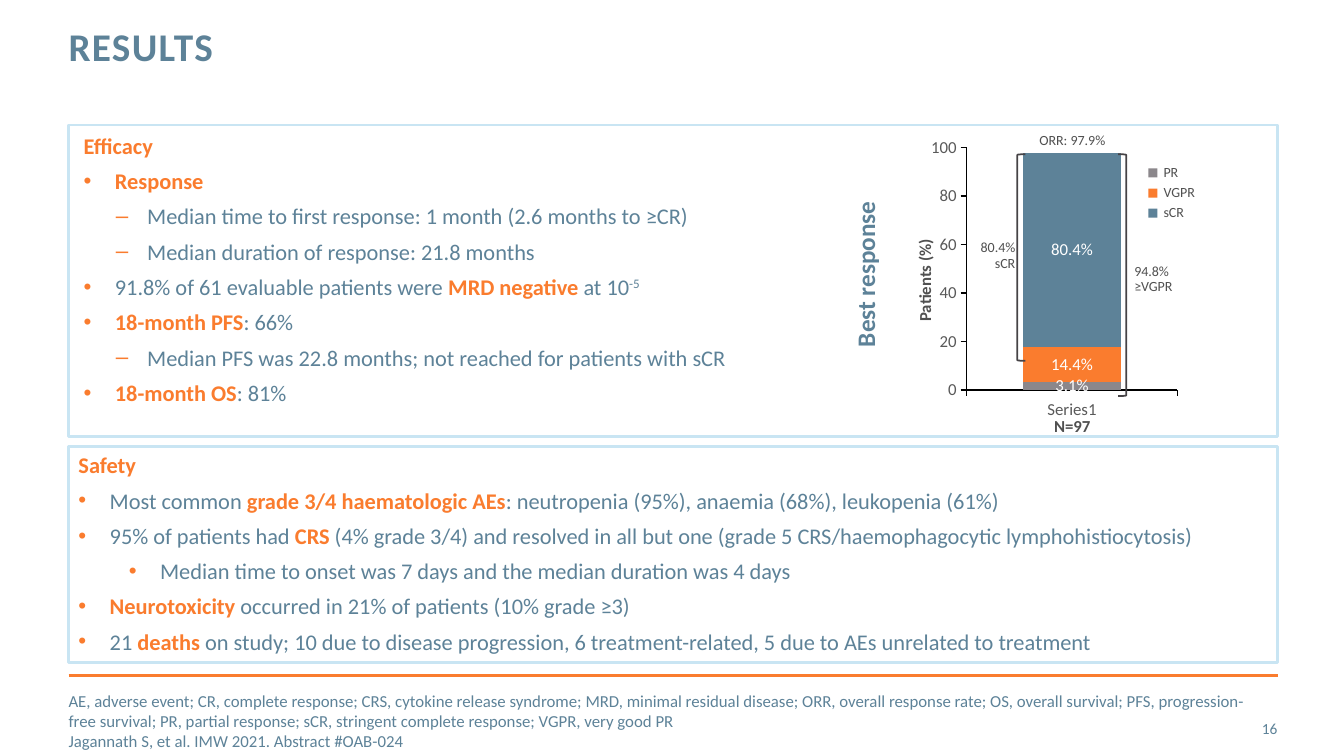
from lxml import etree
from pptx import Presentation
from pptx import util as u
from pptx.chart import data as cd
from pptx.dml.color import RGBColor
from pptx.enum import chart as ec, shapes, text
from pptx.oxml import parse_xml
from pptx.oxml.ns import nsdecls, qn

HUES = {"blue": "5D8298", "orange": "FA7C2E", "gray": "8B878B", "pale": "C9E5F3",
        "ink": "505050", "dark": "464346", "axis": "595959", "black": "000000",
        "white": "FFFFFF"}
ALIGN = {"l": text.PP_ALIGN.LEFT, "c": text.PP_ALIGN.CENTER, "r": text.PP_ALIGN.RIGHT}
MID = text.MSO_ANCHOR.MIDDLE
TOP = text.MSO_ANCHOR.TOP


def hue(name):
    return RGBColor.from_string(HUES[name])


def style(font, size, color, bold=False):
    font.name, font.size, font.bold = "Calibri", u.Pt(size), bold
    font.color.rgb = hue(color)


def write(par, words, size=16, color="blue", bold=False, align="l", line=None,
          before=0, mark=None, indent=0, track=0):
    props = par._p.get_or_add_pPr()
    if mark:
        props.set("marL", str(u.Inches(indent)))
        props.set("indent", str(-u.Inches(0.31)))
        tint = etree.SubElement(props, qn("a:buClr"))
        etree.SubElement(tint, qn("a:srgbClr"), val=HUES["orange"])
        etree.SubElement(props, qn("a:buFont"), typeface="Arial")
        etree.SubElement(props, qn("a:buChar"), char=mark)
    par.alignment = ALIGN[align]
    par.space_before = u.Pt(before)
    if line:
        par.line_spacing = line
    for i, part in enumerate(words.split("*")):
        for j, bit in enumerate(part.split("^")):
            if not bit:
                continue
            run = par.add_run()
            run.text = bit
            strong = i % 2 == 1
            style(run.font, size, "orange" if strong else color, bold or strong)
            if j:
                run._r.get_or_add_rPr().set("baseline", "30000")
            if track:
                run._r.get_or_add_rPr().set("spc", str(track))


class Deck:
    cols, rows = 133.3, 75

    def __init__(self):
        self.file = Presentation()
        self.file.slide_width, self.file.slide_height = u.Inches(13.33), u.Inches(7.5)
        self.page = self.file.slides.add_slide(self.file.slide_layouts[6])

    def place(self, *spans):
        wide, high = self.file.slide_width / self.cols, self.file.slide_height / self.rows
        return [round(span * (high if i % 2 else wide)) for i, span in enumerate(spans)]

    def fill(self, frame, lines, pad=(0, 0), anchor=TOP, **form):
        frame.word_wrap = True
        frame.vertical_anchor = anchor
        frame.margin_left = frame.margin_right = u.Inches(pad[0])
        frame.margin_top = frame.margin_bottom = u.Inches(pad[1])
        for i, item in enumerate(lines):
            words, extra = item if isinstance(item, tuple) else (item, {})
            par = frame.add_paragraph() if i else frame.paragraphs[0]
            write(par, words, **{**form, **extra})

    def text(self, spot, lines, turn=0, **form):
        box = self.page.shapes.add_textbox(*self.place(*spot))
        box.rotation = turn
        self.fill(box.text_frame, lines, **form)

    def shape(self, spot, kind="RECTANGLE", fill=None, edge=None, width=2, flip=False):
        item = self.page.shapes.add_shape(shapes.MSO_SHAPE[kind], *self.place(*spot))
        item.shadow.inherit = False
        if fill:
            item.fill.solid()
            item.fill.fore_color.rgb = hue(fill)
        else:
            item.fill.background()
        if edge:
            item.line.color.rgb, item.line.width = hue(edge), u.Pt(width)
        else:
            item.line.fill.background()
        if flip:
            item._element.spPr.find(qn("a:xfrm")).set("flipH", "1")
        return item

    def label(self, spot, lines, **form):
        box = self.shape(spot, fill="white")
        self.fill(box.text_frame, lines, size=10, color="ink", line=0.9, **form)

    def rule(self, spot, color, width):
        line = self.page.shapes.add_connector(shapes.MSO_CONNECTOR.STRAIGHT, *self.place(*spot))
        line.line.color.rgb, line.line.width = hue(color), u.Pt(width)
        etree.SubElement(line._element.spPr, qn("a:effectLst"))

    def chart(self, spot, series, frame):
        data = cd.CategoryChartData(number_format='0.0"%"')
        data.categories = ["Series1"]
        for i, (value, _) in enumerate(series, 1):
            data.add_series(f"Series {i}", [value])
        chart = self.page.shapes.add_chart(
            ec.XL_CHART_TYPE.COLUMN_STACKED, *self.place(*spot), data).chart
        chart.has_legend = chart.has_title = False
        style(chart.font, 10, "black")
        plot = chart.plots[0]
        plot.gap_width, plot.overlap, plot.vary_by_categories = 116, 100, False
        for bar, (_, color) in zip(plot.series, series):
            bar.format.fill.solid()
            bar.format.fill.fore_color.rgb = hue(color)
            tags = bar.data_labels
            tags.show_value = True
            tags.position = ec.XL_LABEL_POSITION.CENTER
            tags.number_format, tags.number_format_is_linked = '0.0"%"', False
            style(tags.font, 12, "white")
        for axis in (chart.category_axis, chart.value_axis):
            axis.has_major_gridlines = False
            axis.major_tick_mark = ec.XL_TICK_MARK.OUTSIDE
            axis.format.line.color.rgb, axis.format.line.width = hue("black"), u.Pt(1)
            style(axis.tick_labels.font, 12, "axis")
        scale = chart.value_axis
        scale.minimum_scale, scale.maximum_scale, scale.major_unit = 0, 100, 20
        scale.tick_labels.number_format = "0"
        scale.tick_labels.number_format_is_linked = False
        parts = "".join(f'<c:{k} val="{v}"/>' for k, v in zip("xywh", frame))
        area = chart._chartSpace.chart.plotArea
        for old in area.findall(qn("c:layout")):
            area.remove(old)
        area.insert(0, parse_xml(
            f'<c:layout {nsdecls("c")}><c:manualLayout><c:layoutTarget val="inner"/>'
            f'<c:xMode val="edge"/><c:yMode val="edge"/>{parts}</c:manualLayout></c:layout>'))


def dot(words, mark="•", indent=0.31):
    return words, {"mark": mark, "indent": indent, "before": 6}


def dash(words):
    return dot(words, "–", 0.63)


def main():
    deck = Deck()
    left, wide = 6.8, 119.9
    deck.rule((left, 67, 126.8, 67), "orange", 2)
    deck.shape((left, 12.4, wide, 30.9), edge="pale")
    deck.text((8.3, 13.1, 80.9, 31), [
        "*Efficacy*",
        dot("*Response*"),
        dash("Median time to first response: 1 month (2.6 months to ≥CR)"),
        dash("Median duration of response: 21.8 months"),
        dot("91.8% of 61 evaluable patients were *MRD negative *at 10^-5"),
        dot("*18-month PFS*: 66%"),
        dash("Median PFS was 22.8 months; not reached for patients with sCR"),
        dot("*18-month OS*: 81%")])
    deck.text((left, 2.7, 95.6, 8.8), ["RESULTS"], size=28, bold=True,
              line=u.Pt(30), track=100)
    deck.text((118.1, 70.3, 8.6, 4), ["16"], size=11, align="r", anchor=MID)
    deck.text((left, 69.5, 116.9, 4), [
        "AE, adverse event; CR, complete response; CRS, cytokine release syndrome; "
        "MRD, minimal residual disease; ORR, overall response rate; OS, overall survival; "
        "PFS, progression-free survival; PR, partial response; "
        "sCR, stringent complete response; VGPR, very good PR",
        "Jagannath S, et al. IMW 2021. Abstract #OAB-024"], size=12, anchor=MID)
    safe = deck.shape((left, 44.3, wide, 21.4), edge="pale")
    deck.fill(safe.text_frame, [
        "*Safety*",
        dot("Most common *grade 3/4 haematologic AEs*: "
            "neutropenia (95%), anaemia (68%), leukopenia (61%)"),
        dot("95% of patients had *CRS* (4% grade 3/4) and resolved in all but one "
            "(grade 5 CRS/haemophagocytic lymphohistiocytosis)"),
        dot("Median time to onset was 7 days and the median duration was 4 days", indent=0.81),
        dot("*Neurotoxicity* occurred in 21% of patients (10% grade ≥3)"),
        dot("21 *deaths* on study; 10 due to disease progression, 6 treatment-related, "
            "5 due to AEs unrelated to treatment")], pad=(0.1, 0.05))

    deck.text((72.5, 25.2, 26.6, 4), ["Best response"], turn=270, size=18, bold=True,
              align="c", pad=(0.1, 0.05))
    deck.chart((91.8, 12.9, 25.5, 29.3),
               [(3.1, "gray"), (14.4, "orange"), (80.4, "blue")], (0.16, 0.06, 0.82, 0.82))
    for spot, words, turn in (((99.8, 41.5, 13.1, 1.8), "N=97", 0),
                              ((82.1, 26.9, 19.4, 1.8), "Patients (%)", 270)):
        deck.text(spot, [words], turn=turn, size=12, color="ink", bold=True,
                  align="c", line=0.9)
    deck.label((112.5, 26.2, 4.6, 3), ["94.8%", "≥VGPR"])
    deck.label((102.8, 13.2, 7.1, 1.5), ["ORR: 97.9%"], align="c")
    deck.label((96.9, 23.9, 3.8, 3), ["80.4%", "sCR"], align="r")
    for x, high, flip in ((110.9, 24, False), (100.9, 20.5, True)):
        deck.shape((x, 15.3, 0.8, high), "RIGHT_BRACKET", edge="dark", width=1.25, flip=flip)
    for i, (name, color) in enumerate((("PR", "gray"), ("VGPR", "orange"), ("sCR", "blue"))):
        deck.label((115.4, 16.4 + 2 * i, 4, 1.5), [name])
        deck.shape((113.9, 16.7 + 2 * i, 0.9, 0.9), fill=color)
    deck.file.save("out.pptx")


if __name__ == "__main__":
    main()
